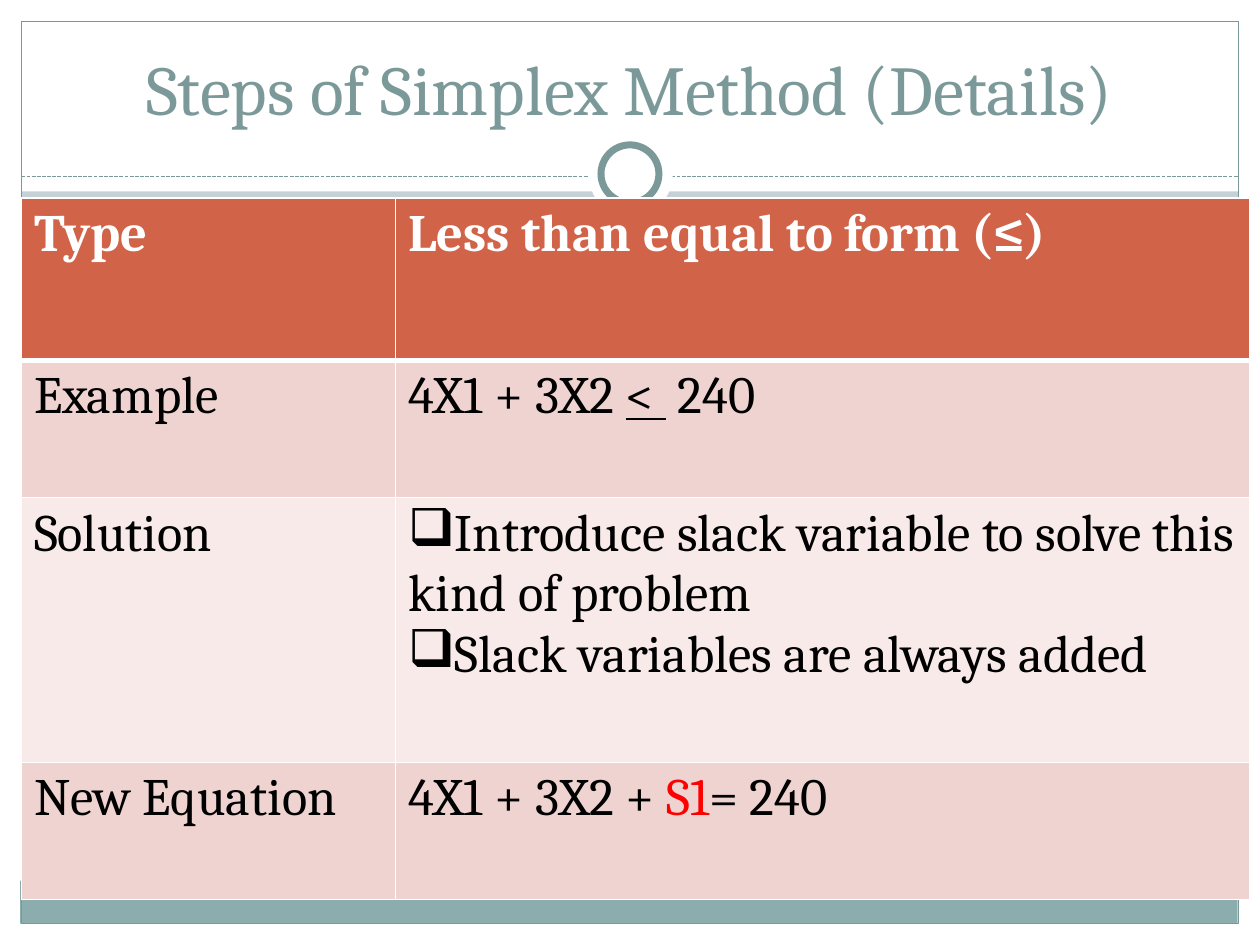
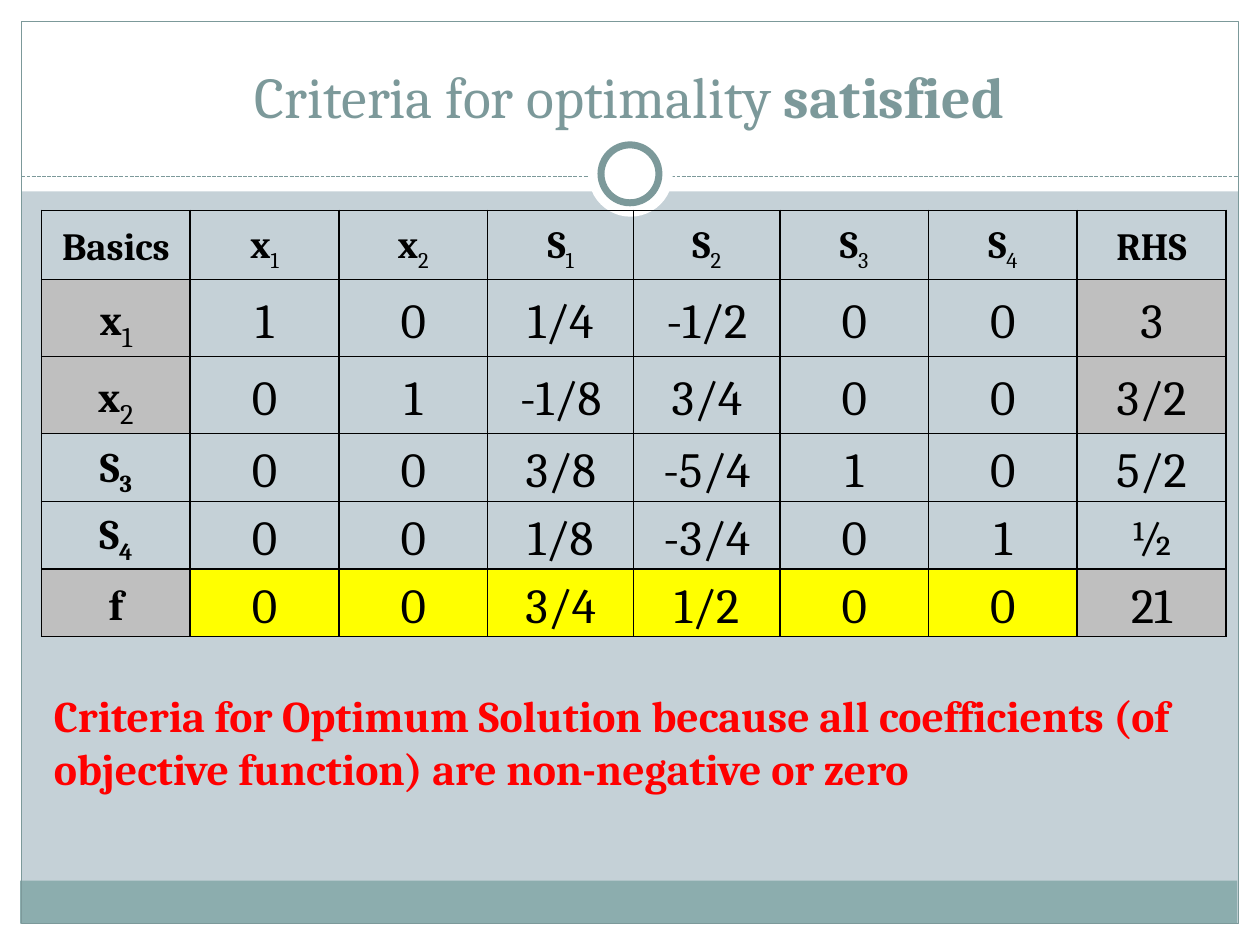
from lxml.etree import SubElement
from pptx import Presentation
from pptx.dml.color import RGBColor
from pptx.enum.dml import MSO_LINE
from pptx.enum.shapes import MSO_CONNECTOR, MSO_SHAPE
from pptx.enum.text import MSO_ANCHOR, PP_ALIGN
from pptx.oxml.ns import qn
from pptx.util import Inches, Pt

FONT = "Cambria"
BACKGROUND, WHITE, BLACK, RED = "C5D1D7", "FFFFFF", "000000", "FF0000"
TEAL, FOOTER = "7C999A", "8CADAE"
HEADER, ROSE, PALE_ROSE = "D16349", "EED3D0", "F7EAE9"
GRAY, YELLOW = "BFBFBF", "FFFF00"
MARGIN, TITLE_BOTTOM = 0.17, 1.52


def rgb(color):
    return RGBColor.from_string(color)


class Deck:
    """Holds the shared style and the slide being built."""

    def __init__(self):
        self.presentation = Presentation()
        self.presentation.slide_width = Inches(10)
        self.presentation.slide_height = Inches(7.5)
        self.slide = None

    def add_slide(self):
        self.slide = self.presentation.slides.add_slide(self.presentation.slide_layouts[6])
        fill = self.slide.background.fill
        fill.solid()
        fill.fore_color.rgb = rgb(BACKGROUND)
        self.frame()

    def frame(self):
        """Draw the white margins, footer band, outline and title ring."""
        rectangle, ellipse = MSO_SHAPE.RECTANGLE, MSO_SHAPE.OVAL
        for box in ((0, 7.33, 10, MARGIN), (0, 0, 10, TITLE_BOTTOM),
                    (0, 0, MARGIN, 7.5), (10 - MARGIN, 0, MARGIN, 7.5)):
            self.shape(rectangle, box, WHITE)
        self.shape(rectangle, (0.16, 6.99, 9.66, 0.34), FOOTER)
        self.shape(rectangle, (MARGIN, MARGIN, 9.66, 7.16), line_width=0.75)
        self.dashed_line(MARGIN, 10 - MARGIN, 1.4)
        self.shape(ellipse, (4.67, 1.05, 0.67, 0.67), WHITE)
        self.shape(ellipse, (4.77, 1.15, 0.46, 0.46), WHITE, line_width=4)

    def shape(self, kind, box, fill=None, line_width=None):
        shape = self.slide.shapes.add_shape(kind, *map(Inches, box))
        shape.shadow.inherit = False
        self.fill(shape.fill, fill)
        if line_width:
            shape.line.color.rgb = rgb(TEAL)
            shape.line.width = Pt(line_width)
        else:
            shape.line.fill.background()

    def dashed_line(self, left, right, top):
        line = self.slide.shapes.add_connector(
            MSO_CONNECTOR.STRAIGHT, *map(Inches, (left, top, right, top)))
        line.line.color.rgb = rgb(TEAL)
        line.line.width = Pt(0.75)
        line.line.dash_style = MSO_LINE.SQUARE_DOT
        SubElement(line._element.spPr, qn("a:effectLst"))

    def fill(self, fill, color):
        if color:
            fill.solid()
            fill.fore_color.rgb = rgb(color)
        else:
            fill.background()

    def title(self, runs):
        self.text((0.33, 0.25, 9.33, 0.83), runs, MSO_ANCHOR.BOTTOM, PP_ALIGN.CENTER)

    def text(self, box, runs, anchor=MSO_ANCHOR.TOP, alignment=PP_ALIGN.LEFT):
        text_frame = self.slide.shapes.add_textbox(*map(Inches, box)).text_frame
        text_frame.word_wrap = True
        text_frame.vertical_anchor = anchor
        self.paragraph(text_frame.paragraphs[0], runs, alignment=alignment)

    def paragraph(self, paragraph, runs, **paragraph_format):
        """Fill a paragraph from (text, format) pairs."""
        for name, value in paragraph_format.items():
            setattr(paragraph, name, value)
        for text, font_format in runs:
            run = paragraph.add_run()
            run.text = text
            values = {"name": FONT, **font_format}
            run.font.color.rgb = rgb(values.pop("color", BLACK))
            if values.pop("subscript", False):
                run._r.get_or_add_rPr().set("baseline", "-25000")
            for name, value in values.items():
                setattr(run.font, name, value)

    def bullet(self, paragraph, character):
        SubElement(paragraph._p.get_or_add_pPr(), qn("a:buChar"), char=character)

    def table(self, left, top, widths, heights):
        box = map(Inches, (left, top, sum(widths), sum(heights)))
        table = self.slide.shapes.add_table(len(heights), len(widths), *box).table
        table.first_row = table.horz_banding = False
        for column, width in zip(table.columns, widths):
            column.width = Inches(width)
        for row, height in zip(table.rows, heights):
            row.height = Inches(height)
        return table

    def cell(self, cell, fill, border, top=1, bottom=1):
        """Set borders first: the fill must follow them in the cell's XML."""
        properties = cell._tc.get_or_add_tcPr()
        for side, width in (("L", 1), ("R", 1), ("T", top), ("B", bottom)):
            line = SubElement(properties, qn(f"a:ln{side}"), w=str(Pt(width)))
            SubElement(SubElement(line, qn("a:solidFill")), qn("a:srgbClr"), val=border)
        self.fill(cell.fill, fill)


def simplex_steps(deck):
    deck.add_slide()
    plain = {"size": Pt(30), "bold": False}
    heading = {"size": Pt(30), "bold": True, "color": WHITE}
    # Each row: fill, label, paragraphs of the second column
    rows = [
        (HEADER, "Type", [[("Less than equal to form (≤)", heading)]]),
        (ROSE, "Example", [[("4X1 + 3X2 ", plain), ("< ", {**plain, "underline": True}),
                            (" 240", plain)]]),
        (PALE_ROSE, "Solution", [
            [("Introduce slack variable to solve this kind of problem", plain)],
            [("Slack variables are always added", plain)]]),
        (ROSE, "New Equation", [[("4X1 + 3X2 + ", plain), ("S1", {**plain, "color": RED}),
                                 ("= 240", plain)]]),
    ]
    table = deck.table(MARGIN, 1.57, (2.97, 6.78), (1.29, 1.09, 2.1, 1.09))
    for row, (fill, label, paragraphs) in enumerate(rows):
        label_format = plain if row else heading
        for column, content in enumerate(([[(label, label_format)]], paragraphs)):
            cell = table.cell(row, column)
            deck.cell(cell, fill, WHITE, top=3 if row == 1 else 1, bottom=1 if row else 3)
            for index, runs in enumerate(content):
                text_frame = cell.text_frame
                paragraph = text_frame.add_paragraph() if index else text_frame.paragraphs[0]
                deck.paragraph(paragraph, runs)
                if len(content) > 1:
                    deck.bullet(paragraph, "❑")
    deck.title([("Steps of Simplex Method (Details)", {"size": Pt(40), "color": TEAL})])


def tableau_runs(text, row, column):
    """Format a tableau entry; an underscore starts the subscript."""
    if row and column:
        return [(text, {"size": Pt(28)})]
    name, _, index = text.partition("_")
    size = Pt(24 if row else 22)
    runs = [(name, {"size": size, "bold": True})]
    if index:
        slack_row = row and name == "S"
        index_size = Pt(28) if row and not slack_row else size
        runs.append((index, {"size": index_size, "bold": bool(slack_row), "subscript": True}))
    return runs


def optimal_tableau(deck):
    deck.add_slide()
    title = {"size": Pt(33), "color": TEAL}
    deck.title([("Criteria for optimality", title), (" satisfied", {**title, "bold": True})])
    rows = [
        "Basics x_1 x_2 S_1 S_2 S_3 S_4 RHS",
        "x_1 1 0 1/4 -1/2 0 0 3",
        "x_2 0 1 -1/8 3/4 0 0 3/2",
        "S_3 0 0 3/8 -5/4 1 0 5/2",
        "S_4 0 0 1/8 -3/4 0 1 ½",
        "f 0 0 3/4 1/2 0 0 21",
    ]
    margins = {"margin_left": Inches(0.07), "margin_right": Inches(0.07),
               "margin_top": 0, "margin_bottom": 0, "vertical_anchor": MSO_ANCHOR.MIDDLE}
    widths = [1.16 if column in (3, 4) else 1.18 for column in range(8)]
    table = deck.table(0.33, 1.67, widths, [0.55] + [0.5] * 5)
    for row, entries in enumerate(rows):
        for column, text in enumerate(entries.split()):
            cell = table.cell(row, column)
            fill = None
            if row in (1, 2, 5) and column in (0, 7):
                fill = GRAY
            elif row == 5:
                fill = YELLOW
            deck.cell(cell, fill, BLACK)
            for name, value in margins.items():
                setattr(cell, name, value)
            deck.paragraph(cell.text_frame.paragraphs[0], tableau_runs(text, row, column),
                           alignment=PP_ALIGN.CENTER, line_spacing=1.15)
    conclusion = ("Criteria for Optimum Solution because all coefficients "
                  "(of objective function) are non-negative or zero")
    deck.text((0.33, 5.42, 9.67, 1.36),
              [(conclusion, {"size": Pt(25), "bold": True, "color": RED})])


def main():
    deck = Deck()
    simplex_steps(deck)
    optimal_tableau(deck)
    deck.presentation.save("out.pptx")


if __name__ == "__main__":
    main()
